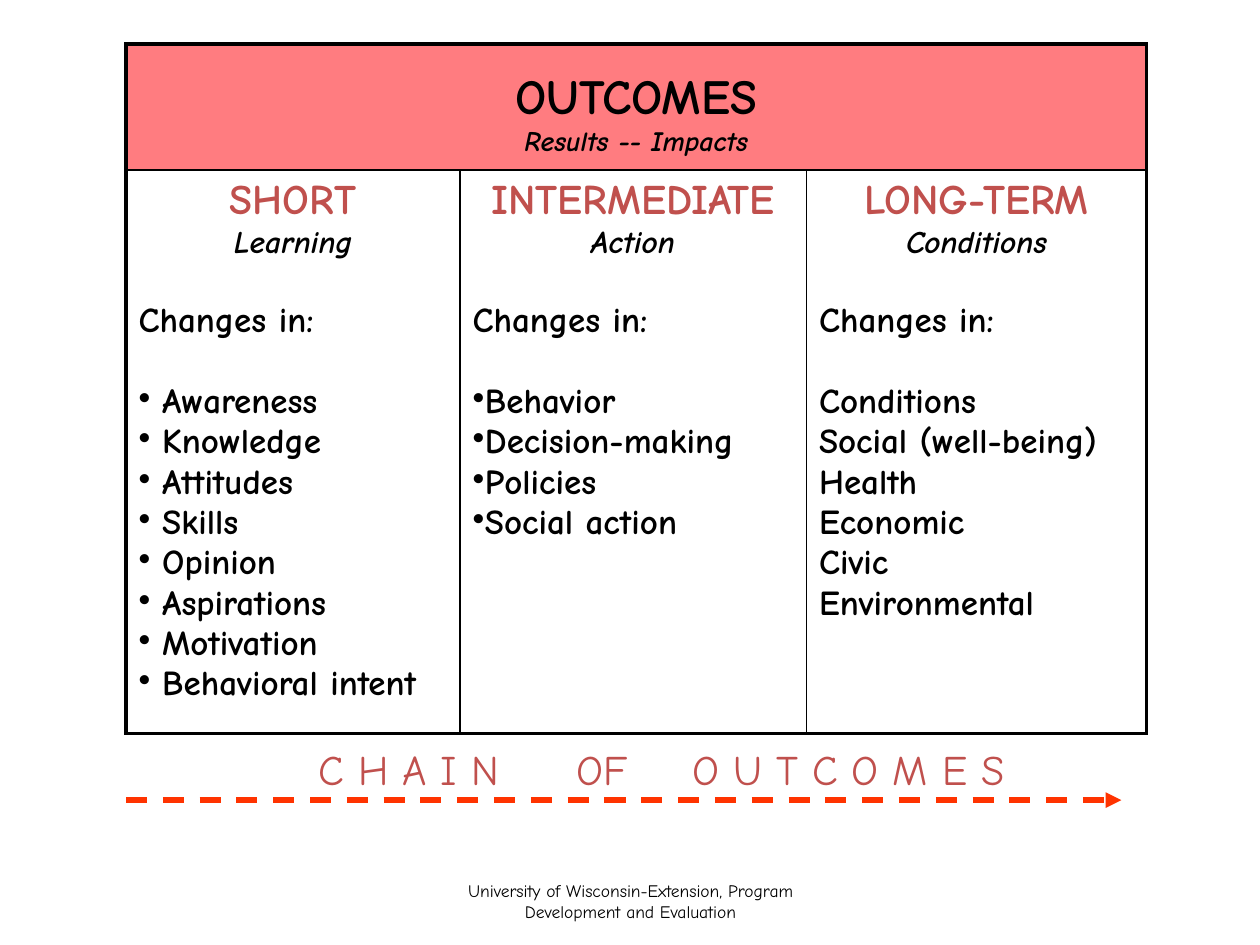
from lxml.etree import SubElement
from pptx import Presentation
from pptx.dml.color import RGBColor
from pptx.enum.dml import MSO_LINE_DASH_STYLE as Dash
from pptx.enum.shapes import MSO_CONNECTOR as Connector
from pptx.enum.text import MSO_ANCHOR as Anchor, PP_ALIGN as Align
from pptx.oxml.ns import qn
from pptx.util import Pt

BLACK = RGBColor(0x00, 0x00, 0x00)
WHITE = RGBColor(0xFF, 0xFF, 0xFF)
PINK = RGBColor(0xFF, 0x7C, 0x80)
BRICK = RGBColor(0xC0, 0x50, 0x4D)
ORANGE = RGBColor(0xFF, 0x33, 0x00)
BODY_SIZE, BODY_LINE = 20, 23
THICK, THIN = 2.25, 1

TITLE = {"size": Pt(28), "bold": True}
SUBTITLE = {"size": Pt(16), "bold": True, "italic": True}
HEADING = {"size": Pt(24), "bold": True}
THEME = {"size": Pt(18), "bold": True, "italic": True}
BODY = {"size": Pt(BODY_SIZE), "bold": True}

# heading, theme, bullet indent in points (0 for no bullet), items
COLUMNS = [
    ("SHORT", "Learning", 13.5,
     ["Awareness", "Knowledge", "Attitudes", "Skills", "Opinion",
      "Aspirations", "Motivation", "Behavioral intent"]),
    ("INTERMEDIATE", "Action", 7,
     ["Behavior", "Decision-making", "Policies", "Social action"]),
    ("LONG-TERM", "Conditions", 0,
     ["Conditions", "Social (well-being)", "Health", "Economic", "Civic",
      "Environmental"]),
]


def add_text(frame, text, font_values, color=BLACK, align=Align.LEFT, before=0):
    """Fill the frame's empty first paragraph, or append a new one."""
    paragraph = frame.paragraphs[0]
    if paragraph.runs:
        paragraph = frame.add_paragraph()
    paragraph.alignment = align
    paragraph.space_before = Pt(before)
    run = paragraph.add_run()
    run.text = text
    run.font.name = "Comic Neue"
    run.font.color.rgb = color
    for name, value in font_values.items():
        setattr(run.font, name, value)
    return paragraph


def style_cell(cell, fill, borders):
    """Set the fill and the left, right, top and bottom border widths."""
    properties = cell._tc.get_or_add_tcPr()
    for side, width in zip(("lnL", "lnR", "lnT", "lnB"), borders):
        line = SubElement(properties, qn(f"a:{side}"), w=str(Pt(width)))
        solid = SubElement(line, qn("a:solidFill"))
        SubElement(solid, qn("a:srgbClr"), val=str(BLACK))
    cell.fill.solid()
    cell.fill.fore_color.rgb = fill


presentation = Presentation()
presentation.slide_width, presentation.slide_height = Pt(720), Pt(540)
slide = presentation.slides.add_slide(presentation.slide_layouts[6])
shapes = slide.shapes

# Source line
source = shapes.add_textbox(Pt(246.2), Pt(500.4), Pt(228.2), Pt(28.8)).text_frame
source.word_wrap = True
source.vertical_anchor = Anchor.MIDDLE
add_text(source, "University of Wisconsin-Extension, Program Development and Evaluation",
         {"size": Pt(10)}, align=Align.CENTER)

# Outcomes table
table = shapes.add_table(2, 3, Pt(72), Pt(25.2), Pt(583.2), Pt(393.8)).table
table.first_row = table.horz_banding = False
for column, width in zip(table.columns, (190.8, 198, 194.4)):
    column.width = Pt(width)
for row, height in zip(table.rows, (72, 321.8)):
    row.height = Pt(height)

for index in range(3):
    left = THICK if index == 0 else THIN
    right = THICK if index == 2 else THIN
    style_cell(table.cell(0, index), PINK, (THICK, THICK, THICK, THIN))
    style_cell(table.cell(1, index), WHITE, (left, right, THIN, THICK))

header = table.cell(0, 0)
header.merge(table.cell(0, 2))
header.margin_top = Pt(15)
add_text(header.text_frame, "OUTCOMES", TITLE, align=Align.CENTER)
add_text(header.text_frame, "Results -- Impacts", SUBTITLE, align=Align.CENTER)

for index, (heading, theme, indent, items) in enumerate(COLUMNS):
    frame = table.cell(1, index).text_frame
    add_text(frame, heading, HEADING, BRICK, Align.CENTER)
    add_text(frame, theme, THEME, align=Align.CENTER)
    add_text(frame, "Changes in:", BODY, before=BODY_LINE)
    for position, item in enumerate(items):
        before = BODY_LINE if position == 0 else 0
        paragraph = add_text(frame, item, BODY, before=before)
        if indent:
            properties = paragraph._p.get_or_add_pPr()
            properties.set("marL", str(Pt(indent)))
            properties.set("indent", str(-Pt(indent)))
            SubElement(properties, qn("a:buChar"), char="•")

# Chain caption: single spaces widened by character spacing part the words
caption = shapes.add_textbox(Pt(100.8), Pt(421.2), Pt(554.4), Pt(36)).text_frame
caption.word_wrap = True
chain = add_text(caption, "C H A I N", {"size": Pt(24)}, BRICK, Align.CENTER)
for gap, word in ((36, "OF"), (29, "O U T C O M E S")):
    for text, spacing in ((" ", gap), (word, 0)):
        run = chain.add_run()
        run.text = text
        run.font.name = "Comic Neue"
        run.font.size = Pt(24)
        run.font.color.rgb = BRICK
        run.font._element.set("spc", str(spacing * 100))

# Chain arrow
arrow = shapes.add_connector(Connector.STRAIGHT, Pt(72), Pt(457.2), Pt(640.8), Pt(457.2))
arrow.line.color.rgb = ORANGE
arrow.line.width = Pt(3)
arrow.line.dash_style = Dash.DASH
SubElement(arrow.line._get_or_add_ln(), qn("a:tailEnd"), type="triangle")
SubElement(arrow._element.spPr, qn("a:effectLst"))

presentation.save("out.pptx")
